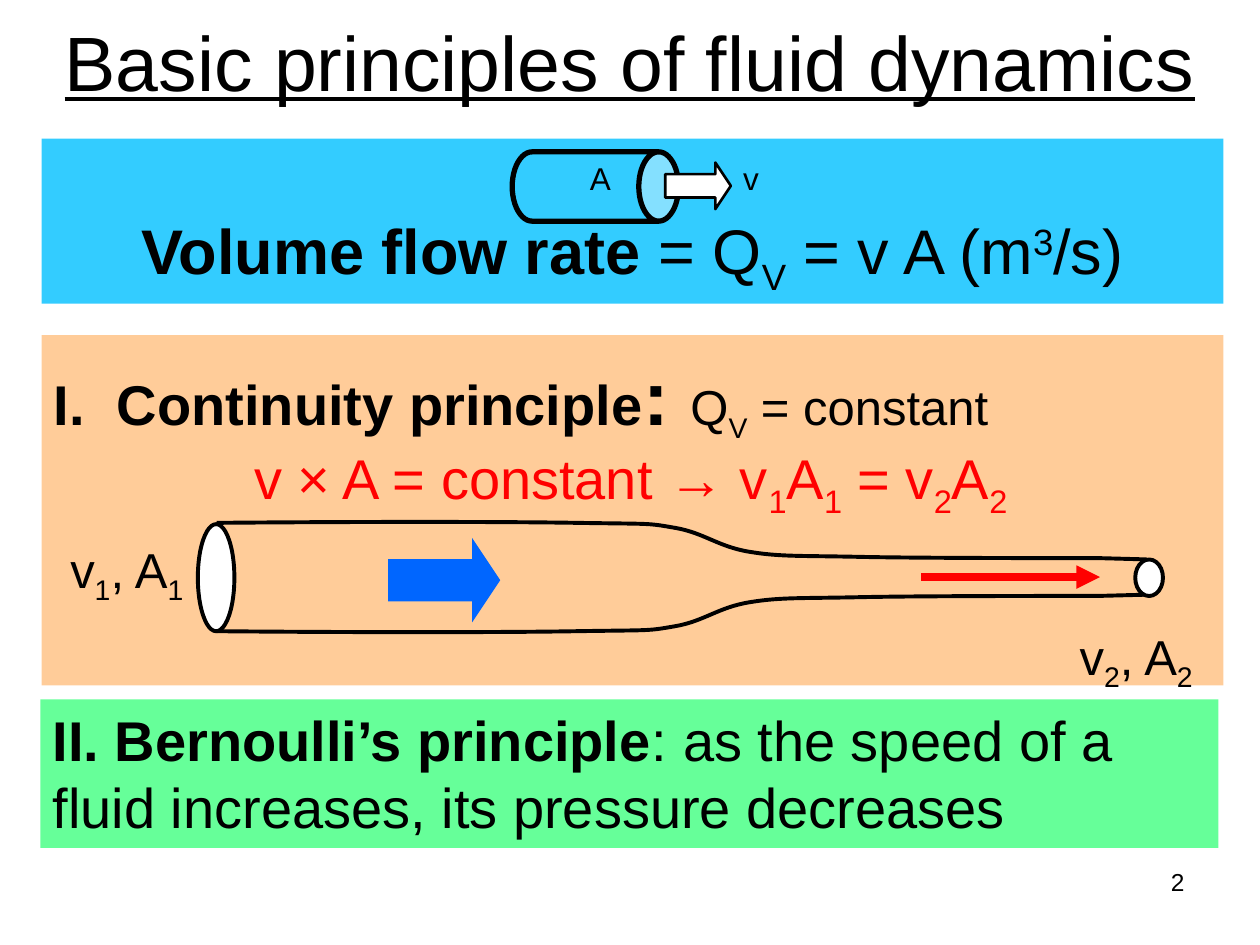
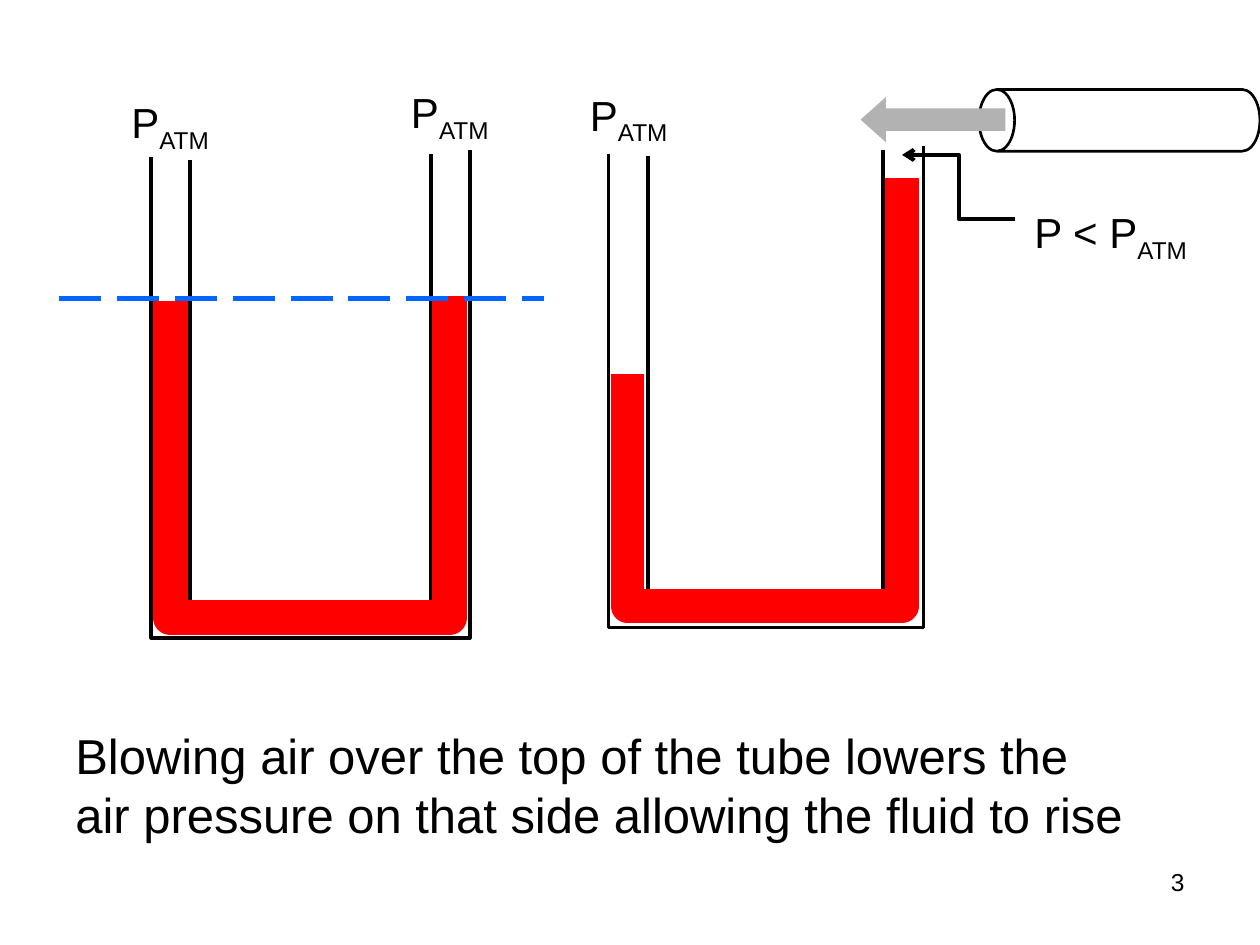
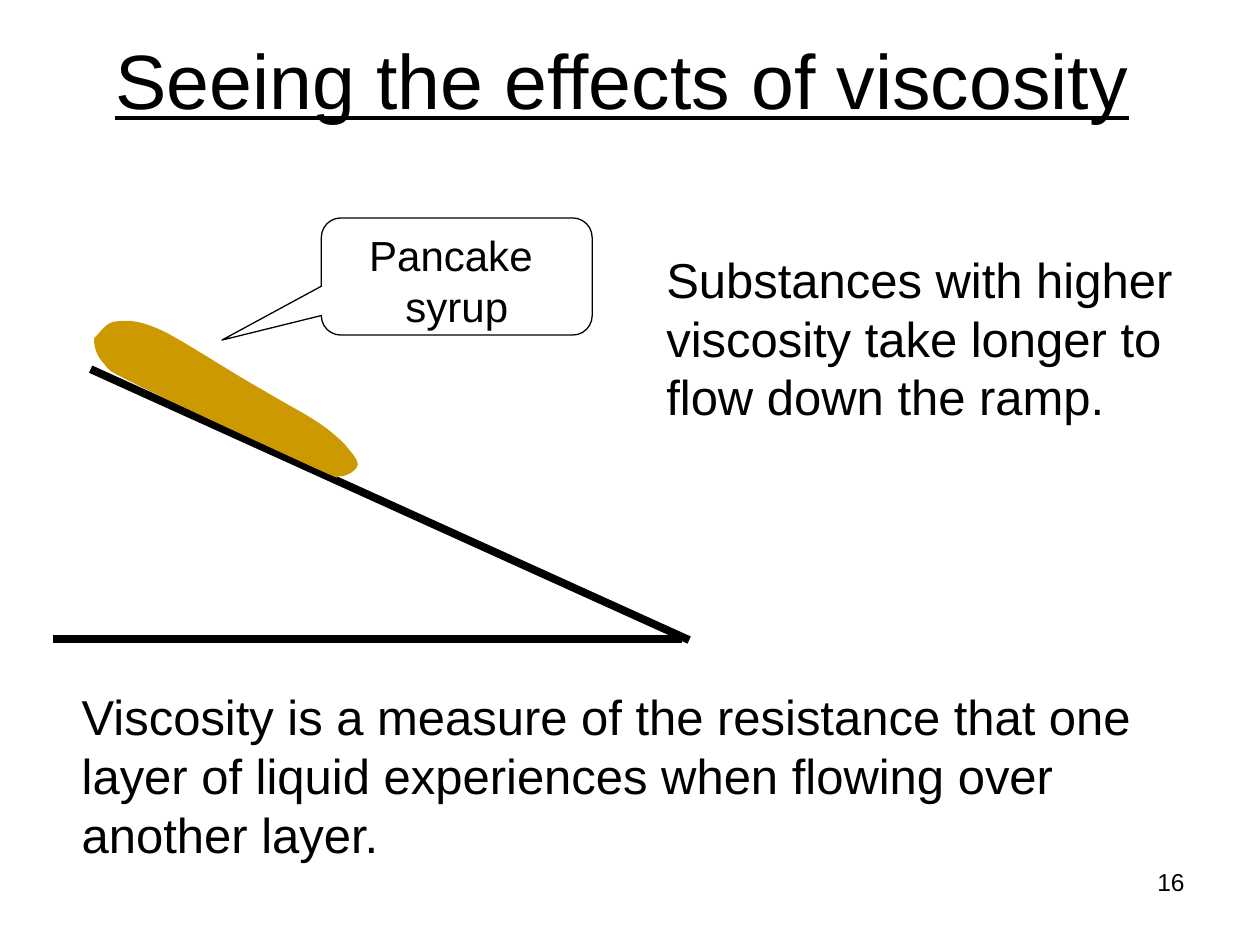
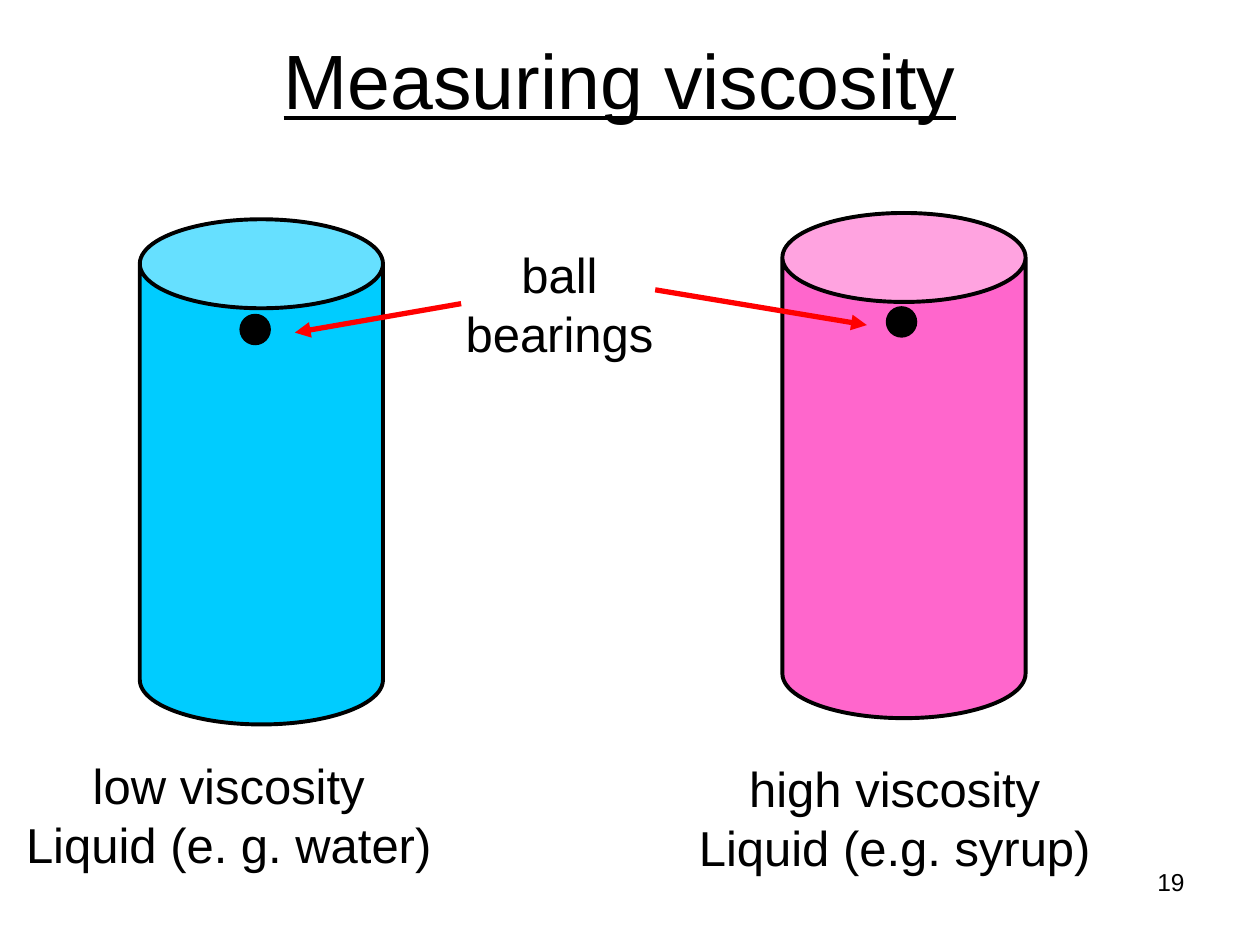
"""Build four slides on fluid dynamics and viscosity."""
from dataclasses import dataclass

from lxml import etree
from pptx import Presentation
from pptx.dml.color import RGBColor
from pptx.enum.dml import MSO_LINE
from pptx.enum.shapes import MSO_CONNECTOR, MSO_SHAPE
from pptx.enum.text import MSO_ANCHOR, PP_ALIGN
from pptx.oxml.ns import qn
from pptx.util import Pt

PX = 9144
RECT, OVAL, CAN = MSO_SHAPE.RECTANGLE, MSO_SHAPE.OVAL, MSO_SHAPE.CAN
RIGHT_ARROW, LEFT_ARROW = MSO_SHAPE.RIGHT_ARROW, MSO_SHAPE.LEFT_ARROW
CALLOUT = MSO_SHAPE.ROUNDED_RECTANGULAR_CALLOUT
STRAIGHT, ELBOW = MSO_CONNECTOR.STRAIGHT, MSO_CONNECTOR.ELBOW
LONG_DASH = MSO_LINE.LONG_DASH
LEFT, CENTER, RIGHT = PP_ALIGN.LEFT, PP_ALIGN.CENTER, PP_ALIGN.RIGHT
TOP, MIDDLE, BOTTOM = MSO_ANCHOR.TOP, MSO_ANCHOR.MIDDLE, MSO_ANCHOR.BOTTOM


@dataclass(frozen=True)
class Theme:
    """Colours, font and type sizes."""
    font: str = "Arial"
    black: str = "000000"
    white: str = "FFFFFF"
    red: str = "FF0000"
    blue: str = "0066FF"
    sky: str = "33CCFF"
    peach: str = "FFCC99"
    mint: str = "66FF99"
    gray: str = "B2B2B2"
    syrup: str = "CC9900"
    water: str = "00CCFF"
    pink: str = "FF66CC"
    title: int = 44
    flow: int = 36
    law: int = 32
    body: int = 28
    label: int = 24
    small: int = 18
    page: int = 14


class Deck:
    """Hold the theme and the current slide."""

    def __init__(self, theme):
        """Open an empty deck."""
        self.theme = theme
        self.prs = Presentation()
        self.prs.slide_width, self.prs.slide_height = 1000 * PX, 750 * PX

    def page(self, number, title=None, box=(43, 0, 900, 125)):
        """Start a slide with its number and optional title."""
        self.slide = self.prs.slides.add_slide(self.prs.slide_layouts[6])
        self.shapes = self.slide.shapes
        if title:
            para = self.text(box, title, self.theme.title, CENTER, MIDDLE)[0]
            para.font.underline = True
        self.text((717, 683, 233, 52), str(number), self.theme.page, RIGHT)

    def runs(self, para, text, size=None):
        """Add runs; *bold*, _sub_ and ^super^ marks toggle."""
        live, part = set(), ""
        for char in text + "*":
            if char not in "*_^":
                part += char
                continue
            if part:
                run = para.add_run()
                run.text, part = part, ""
                if "*" in live:
                    run.font.bold = True
                if size:
                    run.font.size = Pt(size)
                for mark, shift in (("_", "-25000"), ("^", "30000")):
                    if mark in live:
                        run.font._element.set("baseline", shift)
            live ^= {char}

    def style(self, para, size, align=LEFT, color=None):
        """Set the font and alignment of a paragraph."""
        para.alignment = align
        font = para.font
        font.name, font.size = self.theme.font, Pt(size)
        font.color.rgb = RGBColor.from_string(color or self.theme.black)

    def label(self, shape, text, size, align=LEFT, anchor=TOP, wrap=True):
        """Fill a shape with one paragraph per line of text."""
        frame = shape.text_frame
        frame.word_wrap, frame.vertical_anchor = wrap, anchor
        for i, line in enumerate(text.split("\n")):
            para = frame.add_paragraph() if i else frame.paragraphs[0]
            self.style(para, size, align)
            self.runs(para, line)
        return frame.paragraphs

    def text(self, box, text, size, align=LEFT, anchor=TOP, wrap=True):
        """Add a text box."""
        shape = self.shapes.add_textbox(*(n * PX for n in box))
        return self.label(shape, text, size, align, anchor, wrap)

    def paint(self, shape, fill=None, line=None, width=2.25):
        """Set fill and outline and drop the shadow."""
        shape.shadow.inherit = False
        if fill:
            shape.fill.solid()
            shape.fill.fore_color.rgb = RGBColor.from_string(fill)
        else:
            shape.fill.background()
        if line:
            shape.line.color.rgb = RGBColor.from_string(line)
            shape.line.width = Pt(width)
        else:
            shape.line.fill.background()
        return shape

    def shape(self, kind, box, fill=None, line=None, width=2.25, adj=(), turn=0):
        """Add a preset shape."""
        shape = self.shapes.add_shape(kind, *(n * PX for n in box))
        for i, value in enumerate(adj):
            shape.adjustments[i] = value
        shape.rotation = turn
        return self.paint(shape, fill, line, width)

    def free(self, points, fill=None, line=None, width=2.25, close=False):
        """Add a freeform with straight sides."""
        pen = self.shapes.build_freeform(*points[0], scale=PX)
        pen.add_line_segments(points[1:], close=close)
        return self.paint(pen.convert_to_shape(), fill, line, width)

    def curve(self, points, **look):
        """Add a freeform whose points form cubic curves."""
        shape = self.free(points, **look)
        lines = list(shape._element.iter(qn("a:lnTo")))
        for one, two, end in zip(lines[::3], lines[1::3], lines[2::3]):
            end.tag = qn("a:cubicBezTo")
            for i, old in enumerate((one, two)):
                end.insert(i, old[0])
                old.getparent().remove(old)

    def line(self, start, end, color, width, head=None, dash=None, kind=STRAIGHT):
        """Add a connector, with an arrowhead at its end if named."""
        link = self.shapes.add_connector(kind, *(n * PX for n in start + end))
        link.line.color.rgb = RGBColor.from_string(color)
        link.line.width = Pt(width)
        if dash:
            link.line.dash_style = dash
        props = link._element.spPr
        if head:
            etree.SubElement(props.find(qn("a:ln")), qn("a:tailEnd"), type=head)
        etree.SubElement(props, qn("a:effectLst"))

    def tube(self, inner, outer, fluid, width):
        """Draw a U-tube; each part is left, right, two tops and base."""
        black, red = self.theme.black, self.theme.red
        for part, color, size in ((inner, black, 2.25), (outer, black, 2.25),
                                  (fluid, red, width)):
            left, right, top, peak, base = part
            self.free([(left, top), (left, base), (right, base), (right, peak)],
                      line=color, width=size)


def basics(deck):
    """Draw the basic principles."""
    t = deck.theme
    deck.page(2, "Basic principles of fluid dynamics", (0, 0, 1000, 96))
    band = deck.shape(RECT, (33, 110, 938, 131), t.sky)
    deck.label(band, "*Volume flow rate* = Q_V_ = v A (m^3^/s)", t.flow, CENTER, BOTTOM)
    deck.shape(CAN, (445, 82, 55, 132), t.sky, t.black, 3, (0.574,), 90)
    deck.text((457, 121, 39, 46), "A", t.small, CENTER, wrap=False)
    deck.shape(RIGHT_ARROW, (528, 129, 52, 37), t.white, t.black, 1.5, (0.5, 0.331))
    deck.text((579, 121, 34, 46), "v", t.small, CENTER, wrap=False)

    band = deck.shape(RECT, (33, 266, 938, 278), t.peach)
    band.text_frame.margin_top = 11 * PX
    first, second = deck.label(band, "\nv × A = constant → v_1_A_1_ = v_2_A_2_", t.law)
    for text, size in (("*Continuity principle*", None), ("*: *", t.title),
                       ("Q_V_ = constant", t.body)):
        deck.runs(first, text, size)
    props = first._p.get_or_add_pPr()
    props.set("marL", str(50 * PX))
    props.set("indent", str(-50 * PX))
    props.insert(0, etree.Element(qn("a:buAutoNum"), type="romanUcPeriod"))
    deck.style(second, t.law, color=t.red)
    second._p.get_or_add_pPr().set("marL", str(159 * PX))

    deck.text((46, 423, 116, 57), "v_1_, A_1_", t.body, wrap=False)
    deck.shape(RIGHT_ARROW, (308, 427, 89, 67), t.blue, adj=(0.5, 0.333))
    deck.text((847, 492, 116, 57), "v_2_, A_2_", t.body, wrap=False)
    wall = [(172, 415), (283, 414), (398, 414), (458, 415), (519, 416), (513, 415),
            (536, 419), (559, 423), (570, 434), (595, 438), (619, 442), (636, 441),
            (683, 442), (729, 443), (835, 443), (872, 443), (910, 444), (910, 444),
            (910, 444)]
    deck.curve(wall, line=t.black)
    deck.curve([(x, 916 - y) for x, y in wall], line=t.black)
    for box in ((157, 416, 29, 85), (901, 444, 22, 29)):
        deck.shape(OVAL, box, t.white, t.black)
    deck.line((731, 458), (873, 458), t.red, 4.5, "triangle")

    band = deck.shape(RECT, (32, 555, 935, 118), t.mint)
    law = deck.label(band, "*II. Bernoulli’s principle*: as the speed of a fluid "
                     "increases, its pressure decreases", t.law)[0]
    law.space_before = Pt(4)


def tubes(deck):
    """Draw the two U-tubes."""
    t = deck.theme
    deck.page(3)
    deck.tube((151, 342, 127, 122, 478), (120, 373, 125, 119, 506),
              (135, 357, 239, 235, 490), 20)
    deck.tube((514, 701, 124, 119, 470), (483, 733, 122, 116, 498),
              (498, 716, 297, 141, 481), 19.25)
    deck.shape(CAN, (864, -16, 49, 223), t.white, t.black, 1.5, (0.577,), 270)
    deck.shape(LEFT_ARROW, (683, 77, 115, 36), t.gray, adj=(0.5, 0.561))
    deck.text((50, 571, 854, 103), "Blowing air over the top of the tube lowers the\n"
              "air pressure on that side allowing the fluid to rise", t.body, wrap=False)
    deck.line((47, 237), (432, 237), t.blue, 3, dash=LONG_DASH)
    for left, top in ((92, 72), (314, 64), (456, 66)):
        deck.text((left, top, 86, 51), "P_ATM_", t.label, CENTER, wrap=False)
    deck.text((800, 159, 163, 50), "P < P_ATM_", t.label, CENTER)
    deck.line((806, 174), (716, 123), t.black, 2.25, "arrow", kind=ELBOW)


def ramp(deck):
    """Draw syrup on a ramp."""
    t = deck.theme
    deck.page(16, "Seeing the effects of viscosity", (44, 0, 900, 125))
    deck.line((72, 293), (547, 508), t.black, 4.5)
    deck.line((541, 507), (42, 507), t.black, 4.5)
    blob = [(75, 268), (74, 272), (76, 282), (82, 288), (88, 295), (82, 292),
            (110, 306), (138, 320), (223, 359), (249, 371), (276, 383), (264, 378),
            (270, 378), (276, 378), (283, 373), (284, 369), (284, 364), (278, 358),
            (273, 352), (267, 346), (260, 340), (249, 333), (238, 326), (226, 320),
            (206, 308), (186, 297), (148, 272), (130, 263), (111, 254), (102, 254),
            (93, 255), (84, 255), (79, 265), (75, 268)]
    deck.curve(blob, fill=t.syrup, close=True)
    note = deck.shape(CALLOUT, (255, 173, 215, 93), None, t.black, 0.75,
                      (-0.867, 0.543, 0.167))
    deck.label(note, "Pancake \nsyrup", t.label, CENTER)
    deck.text((519, 193, 423, 150), "Substances with higher\nviscosity take longer to\n"
              "flow down the ramp.", t.body, wrap=False)
    deck.text((55, 540, 871, 150), "Viscosity is a measure of the resistance that one\n"
              "layer of liquid experiences when flowing over another layer.", t.body)


def measure(deck):
    """Draw the two cylinders of liquid."""
    t = deck.theme
    deck.page(19, "Measuring viscosity", (42, 0, 900, 125))
    for left, top, fill in ((111, 174, t.water), (621, 169, t.pink)):
        deck.shape(CAN, (left, top, 193, 401), fill, t.black, adj=(0.366,))
    for left, top in ((190, 249), (703, 243)):
        deck.shape(OVAL, (left, top, 25, 25), t.black)
    for box, text in (((10, 595, 343, 103), "low viscosity\nLiquid (e. g. water)"),
                      ((544, 597, 332, 103), "high viscosity\nLiquid (e.g. syrup)"),
                      ((359, 189, 170, 103), "ball\nbearings")):
        deck.text(box, text, t.body, CENTER, wrap=False)
    for start, end in (((366, 241), (234, 264)), ((520, 230), (688, 258))):
        deck.line(start, end, t.red, 3, "triangle")


def main():
    """Build and save the deck."""
    deck = Deck(Theme())
    for draw in (basics, tubes, ramp, measure):
        draw(deck)
    deck.prs.save("out.pptx")


if __name__ == "__main__":
    main()
